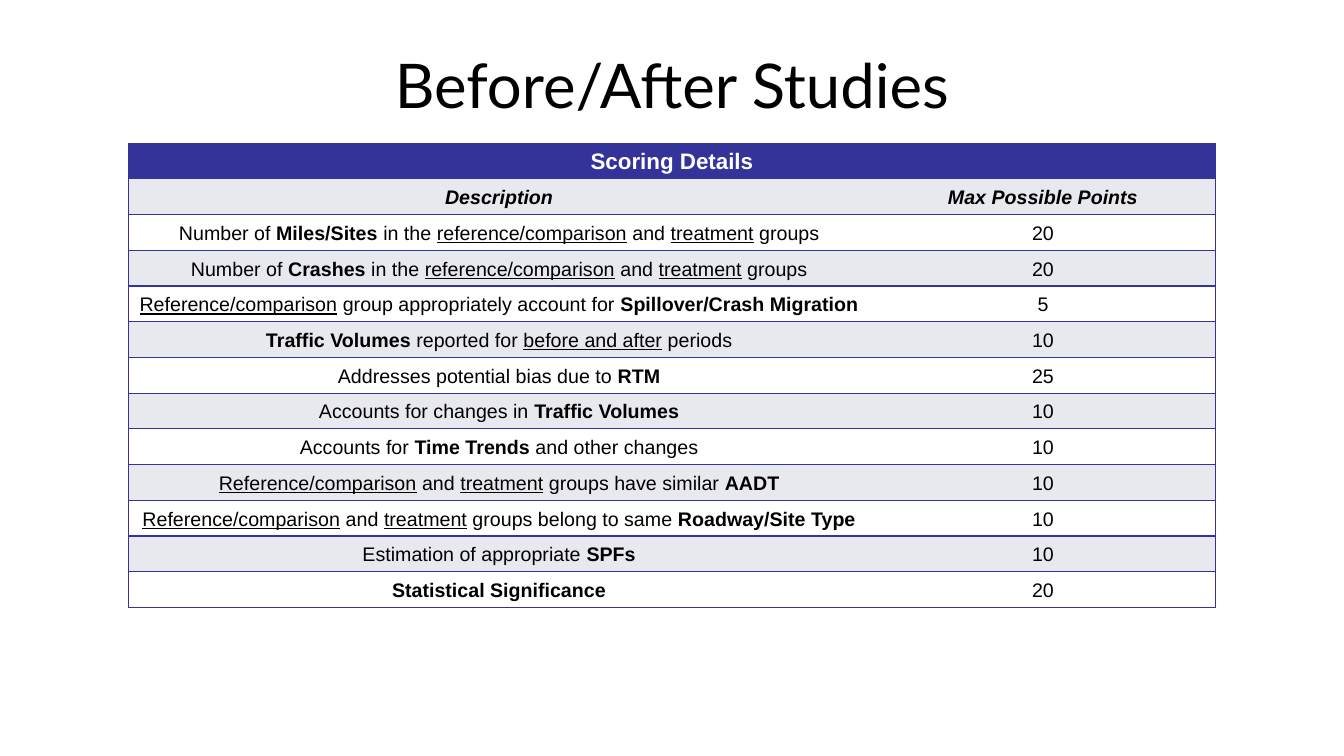
from dataclasses import dataclass

from lxml.etree import SubElement
from pptx import Presentation
from pptx.dml.color import RGBColor
from pptx.enum.text import MSO_ANCHOR, PP_ALIGN
from pptx.oxml.ns import qn
from pptx.slide import Slide
from pptx.table import _Cell
from pptx.text.text import _Paragraph
from pptx.util import Emu, Inches, Pt


@dataclass(frozen=True)
class Theme:
    title_font: str = "Lato"
    body_font: str = "Arial"
    title_size: int = 44
    heading_size: int = 16
    body_size: int = 14
    ink: str = "000000"
    paper: str = "FFFFFF"
    accent: str = "333399"
    band: str = "E8E8EF"


@dataclass(frozen=True)
class Phrase:
    text: str
    bold: bool = False
    italic: bool = False
    underline: bool = False


@dataclass(frozen=True)
class Criterion:
    description: tuple[Phrase, ...]
    points: Phrase


@dataclass(frozen=True)
class Area:
    left: float
    top: float
    width: float
    height: float


THEME = Theme()
SLIDE_WIDTH, SLIDE_HEIGHT = Inches(13.33), Inches(7.5)
TITLE_AREA = Area(15, 4.4, 70, 13.33)
SCORING_AREA = Area(9.53, 18.93, 80.94, 61.47)
DESCRIPTION_SHARE = 68.21


def plain(text: str) -> Phrase:
    return Phrase(text)


def strong(text: str) -> Phrase:
    return Phrase(text, bold=True)


def under(text: str) -> Phrase:
    return Phrase(text, underline=True)


def label(text: str) -> Phrase:
    return Phrase(text, bold=True, italic=True)


def criterion(points: int, *description: Phrase) -> Criterion:
    return Criterion(description, plain(str(points)))


GROUPS = (under("reference/comparison"), plain(" and "), under("treatment"), plain(" groups"))
BOTH_GROUPS = (under("Reference/comparison"), plain(" and "), under("treatment"))

CRITERIA = [
    Criterion((label("Description"),), label("Max Possible Points")),
    criterion(20, plain("Number of "), strong("Miles/Sites "), plain("in the "), *GROUPS),
    criterion(20, plain("Number of "), strong("Crashes"), plain(" in the "), *GROUPS),
    criterion(5, under("Reference/comparison"), plain(" group appropriately account for "),
              strong("Spillover/Crash Migration")),
    criterion(10, strong("Traffic Volumes "), plain("reported for "),
              under("before and after"), plain(" periods")),
    criterion(25, plain("Addresses potential bias due to "), strong("RTM")),
    criterion(10, plain("Accounts for changes in "), strong("Traffic Volumes")),
    criterion(10, plain("Accounts for "), strong("Time Trends "), plain("and other changes")),
    criterion(10, *BOTH_GROUPS, plain(" groups have similar "), strong("AADT")),
    criterion(10, *BOTH_GROUPS, plain(" groups belong to same "), strong("Roadway/Site Type")),
    criterion(10, plain("Estimation of appropriate "), strong("SPFs")),
    criterion(20, strong("Statistical Significance")),
]


def place(area: Area) -> tuple[Emu, Emu, Emu, Emu]:
    return (
        Emu(round(SLIDE_WIDTH * area.left / 100)),
        Emu(round(SLIDE_HEIGHT * area.top / 100)),
        Emu(round(SLIDE_WIDTH * area.width / 100)),
        Emu(round(SLIDE_HEIGHT * area.height / 100)),
    )


def add_phrase(paragraph: _Paragraph, phrase: Phrase, font: str, size: int, color: str) -> None:
    run = paragraph.add_run()
    run.text = phrase.text
    run.font.name = font
    run.font.size = Pt(size)
    run.font.bold = phrase.bold
    run.font.italic = phrase.italic
    run.font.underline = phrase.underline
    run.font.color.rgb = RGBColor.from_string(color)


def add_borders(cell: _Cell, sides: str) -> None:
    properties = cell._tc.get_or_add_tcPr()
    for position, side in enumerate("LRTB"):
        border = SubElement(properties, qn(f"a:ln{side}"), w=str(Pt(1)))
        if side in sides:
            fill = SubElement(border, qn("a:solidFill"))
            SubElement(fill, qn("a:srgbClr"), val=THEME.accent)
        else:
            SubElement(border, qn("a:noFill"))
        properties.insert(position, border)


def fill_cell(cell: _Cell, phrases: tuple[Phrase, ...], size: int, color: str,
              background: str, sides: str) -> None:
    cell.vertical_anchor = MSO_ANCHOR.MIDDLE
    cell.margin_left = cell.margin_right = Inches(0.07)
    cell.margin_top = cell.margin_bottom = 0
    cell.fill.solid()
    cell.fill.fore_color.rgb = RGBColor.from_string(background)
    add_borders(cell, sides)
    paragraph = cell.text_frame.paragraphs[0]
    paragraph.alignment = PP_ALIGN.CENTER
    paragraph.line_spacing = 1.1
    paragraph.space_after = Pt(6)
    for phrase in phrases:
        add_phrase(paragraph, phrase, THEME.body_font, size, color)


def add_title(slide: Slide, text: str) -> None:
    title = slide.shapes.title
    title.left, title.top, title.width, title.height = place(TITLE_AREA)
    title.text_frame.vertical_anchor = MSO_ANCHOR.MIDDLE
    paragraph = title.text_frame.paragraphs[0]
    paragraph.alignment = PP_ALIGN.CENTER
    add_phrase(paragraph, plain(text), THEME.title_font, THEME.title_size, THEME.ink)


def add_scoring(slide: Slide, heading: str, criteria: list[Criterion]) -> None:
    row_count = len(criteria) + 1
    left, top, width, height = place(SCORING_AREA)
    scoring = slide.shapes.add_table(row_count, 2, left, top, width, height).table
    description_width = round(width * DESCRIPTION_SHARE / 100)
    scoring.columns[0].width = Emu(description_width)
    scoring.columns[1].width = Emu(width - description_width)
    for row in scoring.rows:
        row.height = Emu(height // row_count)

    scoring.cell(0, 0).merge(scoring.cell(0, 1))
    for column, phrases in enumerate(((strong(heading),), ())):
        fill_cell(scoring.cell(0, column), phrases, THEME.heading_size,
                  THEME.paper, THEME.accent, "LRTB")

    for row, entry in enumerate(criteria, start=1):
        background = THEME.band if row % 2 else THEME.paper
        fill_cell(scoring.cell(row, 0), entry.description, THEME.body_size,
                  THEME.ink, background, "LTB")
        fill_cell(scoring.cell(row, 1), (entry.points,), THEME.body_size,
                  THEME.ink, background, "RTB")


def main() -> None:
    presentation = Presentation()
    presentation.slide_width, presentation.slide_height = SLIDE_WIDTH, SLIDE_HEIGHT
    slide = presentation.slides.add_slide(presentation.slide_layouts[5])
    add_title(slide, "Before/After Studies")
    add_scoring(slide, "Scoring Details", CRITERIA)
    presentation.save("out.pptx")


if __name__ == "__main__":
    main()
